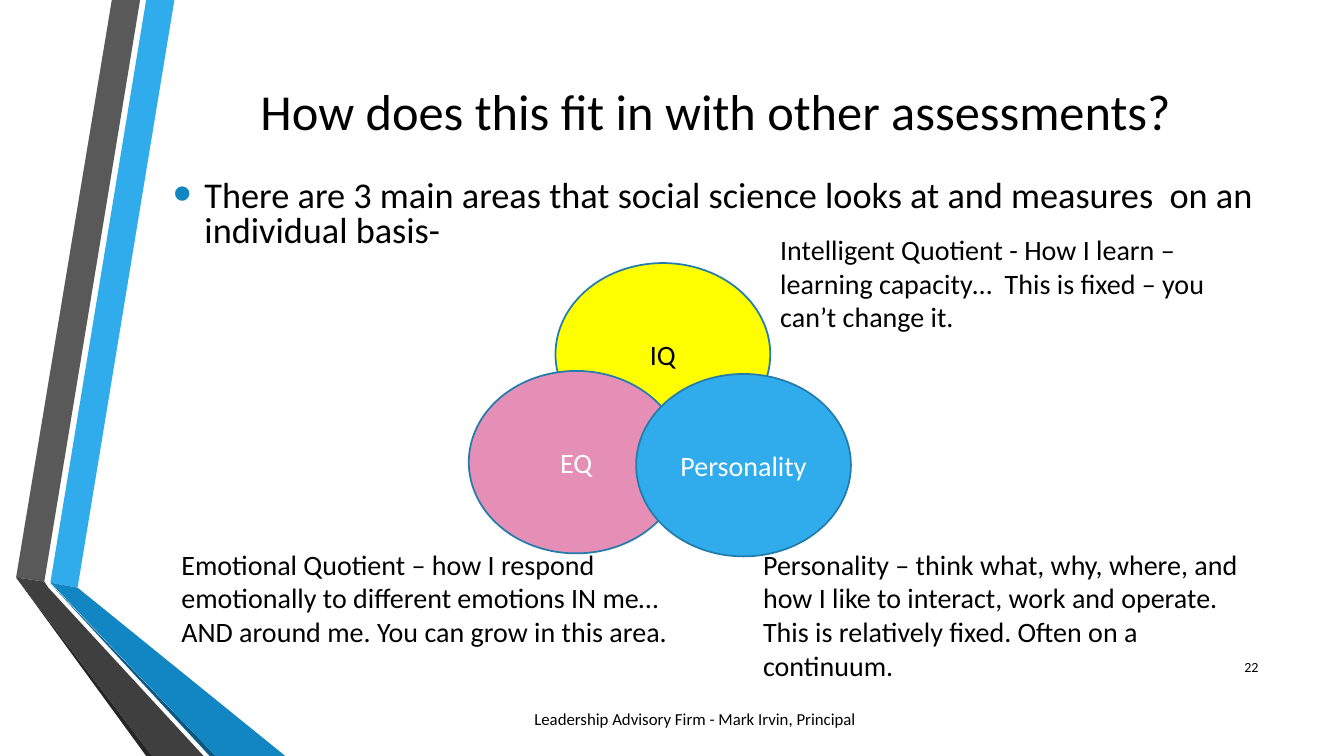
from dataclasses import dataclass

import pptx
import pptx.dml.color
import pptx.enum.shapes
import pptx.enum.text
import pptx.oxml
import pptx.oxml.ns
import pptx.util
from pptx.util import Inches

ALIGN = pptx.enum.text.PP_ALIGN
ANCHOR = pptx.enum.text.MSO_ANCHOR


@dataclass(frozen=True)
class Theme:
    font: str = "Calibri"
    black: str = "000000"
    white: str = "FFFFFF"
    yellow: str = "FFFF00"
    pink: str = "E68FB6"
    blue: str = "30ACEC"
    blue_mid: str = "1186C3"
    blue_dark: str = "0B5982"
    outline: str = "237DAC"
    grey: str = "595959"
    grey_mid: str = "3F3F3F"
    grey_dark: str = "262626"
    title_pt: float = 36
    lead_pt: float = 25.9
    body_pt: float = 20
    footer_pt: float = 12
    number_pt: float = 10


THEME = Theme()


@dataclass(frozen=True)
class Ribbon:
    color: str
    points: tuple[tuple[float, float], ...]


@dataclass(frozen=True)
class Circle:
    label: str
    left: float
    top: float
    fill: str
    color: str


@dataclass(frozen=True)
class Note:
    text: str
    left: float
    top: float
    width: float
    height: float


RIBBONS = (
    Ribbon(THEME.blue, ((0.5, 5.78), (0.77, 5.83), (1.73, 0), (1.45, 0))),
    Ribbon(THEME.grey, ((1.39, 0), (1.11, 0), (0.16, 5.73), (0.44, 5.77))),
    Ribbon(THEME.grey_dark, ((0.16, 5.73), (1.45, 7.5), (1.51, 7.5))),
    Ribbon(THEME.blue_dark, ((0.5, 5.79), (2.08, 7.5), (2.14, 7.5))),
    Ribbon(THEME.blue_mid, ((0.5, 5.78), (2.14, 7.5), (2.83, 7.5), (0.77, 5.83))),
    Ribbon(THEME.grey_mid, ((2.02, 7.5), (0.48, 5.83), (0.44, 5.77),
                            (0.16, 5.73), (1.51, 7.5))),
)
CIRCLE_SIZE = (2.13, 1.81)
CIRCLES = (
    Circle("IQ", 5.51, 2.61, THEME.yellow, THEME.black),
    Circle("EQ", 4.65, 3.68, THEME.pink, THEME.white),
    Circle("Personality", 6.31, 3.71, THEME.blue, THEME.white),
)
NOTES = (
    Note("Intelligent Quotient - How I learn – learning capacity…  "
         "This is fixed – you can’t change it.", 7.64, 2.26, 4.73, 1.11),
    Note("Emotional Quotient – how I respond emotionally to different emotions "
         "IN me…AND around me. You can grow in this area.", 1.7, 5.38, 5.11, 1.45),
    Note("Personality – think what, why, where, and how I like to interact, work "
         "and operate.  This is relatively fixed. Often on a continuum.",
         7.47, 5.38, 5.11, 1.45),
)


def rgb(color: str) -> pptx.dml.color.RGBColor:
    return pptx.dml.color.RGBColor.from_string(color)


def write(sp, text: str, *, size: float = THEME.body_pt, color: str = THEME.black,
          align=ALIGN.LEFT, anchor=ANCHOR.MIDDLE):
    """Put one formatted paragraph in the shape and return it."""
    tf = sp.text_frame
    tf.word_wrap = True
    tf.vertical_anchor = anchor
    p = tf.paragraphs[0]
    p.alignment = align
    r = p.add_run()
    r.text = text
    r.font.name = THEME.font
    r.font.size = pptx.util.Pt(size)
    r.font.color.rgb = rgb(color)
    return p


def add_box(s, left: float, top: float, width: float, height: float):
    return s.shapes.add_textbox(*map(Inches, (left, top, width, height)))


def add_bullet(p, color: str, percent: int, indent: float) -> None:
    pPr = p._p.get_or_add_pPr()
    pPr.set("marL", str(Inches(indent)))
    pPr.set("indent", str(-Inches(indent)))
    ns = pptx.oxml.ns.nsdecls("a")
    for xml in (f'<a:buClr {ns}><a:srgbClr val="{color}"/></a:buClr>',
                f'<a:buSzPct {ns} val="{percent * 1000}"/>',
                f'<a:buFont {ns} typeface="Arial"/>',
                f'<a:buChar {ns} char="•"/>'):
        pPr.append(pptx.oxml.parse_xml(xml))


def add_ribbon(s, ribbon: Ribbon) -> None:
    start, *rest = [(Inches(x), Inches(y)) for x, y in ribbon.points]
    builder = s.shapes.build_freeform(*start)
    builder.add_line_segments(rest, close=True)
    sp = builder.convert_to_shape()
    sp.shadow.inherit = False
    sp.fill.solid()
    sp.fill.fore_color.rgb = rgb(ribbon.color)
    sp.line.fill.background()


def add_circle(s, circle: Circle) -> None:
    sp = s.shapes.add_shape(pptx.enum.shapes.MSO_SHAPE.OVAL,
                            *map(Inches, (circle.left, circle.top, *CIRCLE_SIZE)))
    sp.shadow.inherit = False
    sp.fill.solid()
    sp.fill.fore_color.rgb = rgb(circle.fill)
    sp.line.color.rgb = rgb(THEME.outline)
    sp.line.width = pptx.util.Pt(1.25)
    write(sp, circle.label, color=circle.color, align=ALIGN.CENTER)


def add_note(s, note: Note) -> None:
    sp = add_box(s, note.left, note.top, note.width, note.height)
    write(sp, note.text, anchor=ANCHOR.TOP)


def main() -> None:
    prs = pptx.Presentation()
    prs.slide_width, prs.slide_height = Inches(13.33), Inches(7.5)
    s = prs.slides.add_slide(prs.slide_layouts[6])

    for ribbon in RIBBONS:
        add_ribbon(s, ribbon)

    write(add_box(s, 1.62, 0.75, 10.96, 0.69),
          "How does this fit in with other assessments?",
          size=THEME.title_pt, align=ALIGN.CENTER)
    lead = write(add_box(s, 1.62, 1.72, 10.96, 0.83),
                 "There are 3 main areas that social science looks at and "
                 "measures  on an individual basis-", size=THEME.lead_pt)
    lead.line_spacing = 0.8
    add_bullet(lead, THEME.blue_mid, percent=145, indent=0.31)

    for circle, note in zip(CIRCLES, NOTES):
        add_circle(s, circle)
        add_note(s, note)

    write(add_box(s, 3.02, 6.93, 7.75, 0.4),
          "Leadership Advisory Firm - Mark Irvin, Principal",
          size=THEME.footer_pt, align=ALIGN.CENTER)
    write(add_box(s, 11.98, 6.42, 0.6, 0.4), "22",
          size=THEME.number_pt, align=ALIGN.RIGHT)

    prs.save("out.pptx")


if __name__ == "__main__":
    main()
